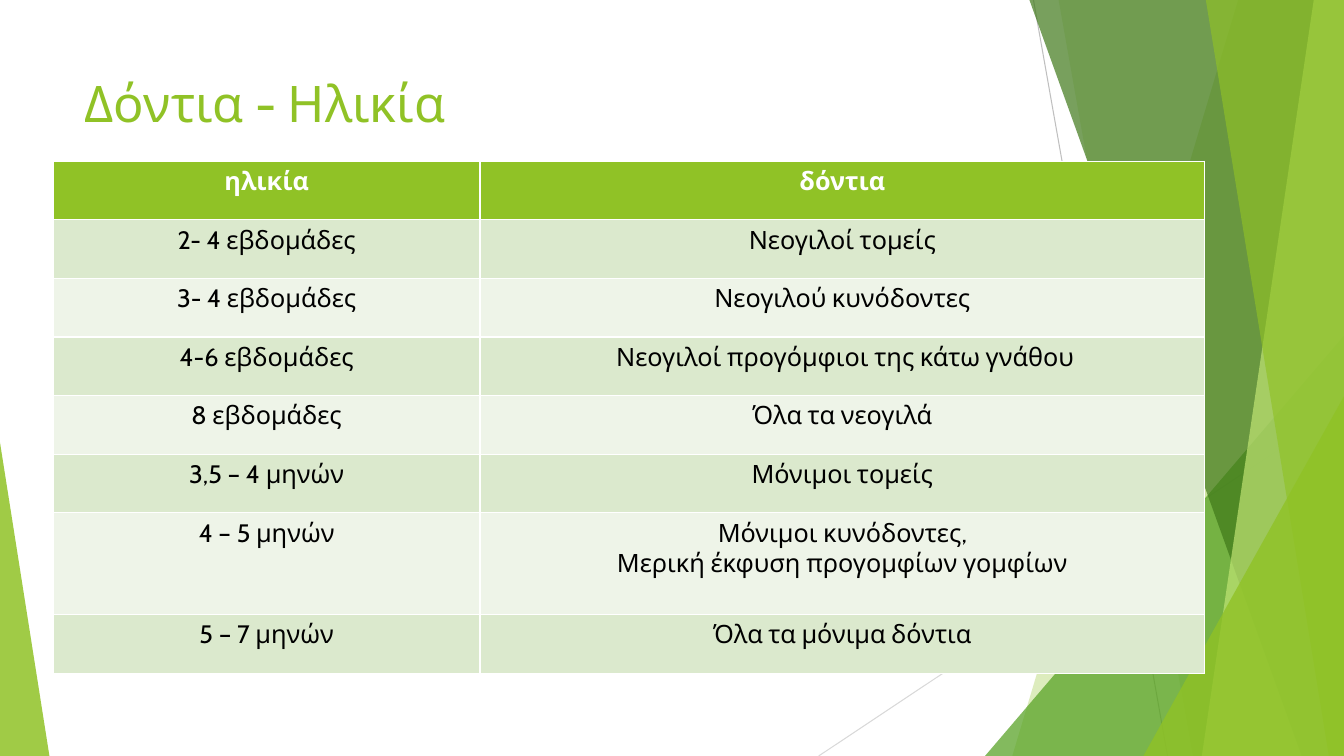
from lxml.etree import SubElement
from pptx import Presentation
from pptx.dml.color import RGBColor
from pptx.enum.shapes import MSO_CONNECTOR, MSO_SHAPE
from pptx.enum.text import MSO_ANCHOR, PP_ALIGN
from pptx.oxml.ns import qn
from pptx.util import Inches, Pt

LIME = RGBColor(0x90, 0xC2, 0x26)
PALE_LIME = RGBColor(0xC0, 0xE4, 0x74)
LEAF = RGBColor(0x54, 0xA0, 0x21)
FOREST = RGBColor(0x3F, 0x78, 0x19)
RAY_GREY = RGBColor(0xBF, 0xBF, 0xBF)
LIGHT_RAY_GREY = RGBColor(0xD9, 0xD9, 0xD9)
DARK_BAND = RGBColor(0xDB, 0xE9, 0xCD)
LIGHT_BAND = RGBColor(0xEE, 0xF4, 0xE8)
WHITE = RGBColor(0xFF, 0xFF, 0xFF)
BLACK = RGBColor(0, 0, 0)

WIDTH, HEIGHT = 13.33, 7.5
FONT = "Cabin"

RAYS = [
    ((3.08, 0), (1.75, 7.5), RAY_GREY),
    ((0, 4.03), (5.21, 7.5), LIGHT_RAY_GREY),
]
FACETS = [
    ("blade", 1.05, 3.29, LIME, 30),
    ("blade", 2.83, 1.5, LIME, 20),
    ("wedge", 3.56, 4.17, LEAF, 72),
    ("blade", 3.12, 0.42, FOREST, 70),
    ("blade", 0.3, 1.41, PALE_LIME, 70),
    ("blade", 1.37, 0.15, LIME, 65),
    ("wedge", 1.99, 3.57, LIME, 80),
]
TEETH_BY_AGE = [
    ("ηλικία", "δόντια"),
    ("2- 4 εβδομάδες", "Νεογιλοί τομείς"),
    ("3- 4 εβδομάδες", "Νεογιλού κυνόδοντες"),
    ("4-6 εβδομάδες", " Νεογιλοί προγόμφιοι της κάτω γνάθου"),
    ("8 εβδομάδες", "Όλα τα νεογιλά"),
    ("3,5 – 4 μηνών", "Μόνιμοι τομείς"),
    ("4 – 5 μηνών", "Μόνιμοι κυνόδοντες,\nΜερική έκφυση προγομφίων γομφίων"),
    ("5 – 7 μηνών", "Όλα τα μόνιμα δόντια"),
]


def apply_format(target, values):
    for name, value in values.items():
        setattr(target, name, value)


def tint(facet, color, opacity):
    facet.shadow.inherit = False
    facet.line.fill.background()
    facet.fill.solid()
    facet.fill.fore_color.rgb = color
    srgb = facet.fill._xPr.find(qn("a:solidFill")).find(qn("a:srgbClr"))
    SubElement(srgb, qn("a:alpha"), val=str(opacity * 1000))


def add_wedge(shapes, left, bottom, width, height, apex, color, opacity):
    wedge = shapes.add_shape(
        MSO_SHAPE.ISOSCELES_TRIANGLE,
        Inches(left), Inches(bottom - height), Inches(width), Inches(height))
    wedge.adjustments[0] = apex
    tint(wedge, color, opacity)


def add_blade(shapes, right, bottom, top_inset, bottom_inset, color, opacity):
    outline = shapes.build_freeform(Inches(right - top_inset), 0)
    corners = [(right, 0), (right, bottom), (right - bottom_inset, bottom)]
    outline.add_line_segments([(Inches(x), Inches(y)) for x, y in corners])
    tint(outline.convert_to_shape(), color, opacity)


def add_ray(shapes, right, start, end, color):
    ray = shapes.add_connector(
        MSO_CONNECTOR.STRAIGHT,
        Inches(right - start[0]), Inches(start[1]),
        Inches(right - end[0]), Inches(end[1]))
    ray.line.color.rgb = color
    ray.line.width = Pt(0.75)
    SubElement(ray._element.spPr, qn("a:effectLst"))


def add_backdrop(shapes, width, height):
    for start, end, color in RAYS:
        add_ray(shapes, width, start, end, color)
    for kind, first, second, color, opacity in FACETS:
        if kind == "blade":
            add_blade(shapes, width, height, first, second, color, opacity)
        else:
            add_wedge(shapes, width - first, height, first, second, 1, color, opacity)
    add_wedge(shapes, 0, height, 0.49, 3.11, 0, LIME, 85)


def set_title(title, left, top, width, height):
    apply_format(title, {
        "left": Inches(left), "top": Inches(top),
        "width": Inches(width), "height": Inches(height)})
    title.text_frame.text = "Δόντια - Ηλικία"
    title.text_frame.vertical_anchor = MSO_ANCHOR.TOP
    heading = title.text_frame.paragraphs[0]
    heading.alignment = PP_ALIGN.LEFT
    apply_format(heading.runs[0].font, {"size": Pt(36), "name": FONT})
    heading.runs[0].font.color.rgb = LIME


def fill_cell(cell, text, band, ink, bold):
    cell.fill.solid()
    cell.fill.fore_color.rgb = band
    cell.text_frame.text = text
    for paragraph in cell.text_frame.paragraphs:
        paragraph.alignment = PP_ALIGN.CENTER
        for run in paragraph.runs:
            apply_format(run.font, {"size": Pt(18), "name": FONT, "bold": bold})
            run.font.color.rgb = ink


def add_teeth_table(shapes, left, top, width, height):
    table = shapes.add_table(
        len(TEETH_BY_AGE), 2,
        Inches(left), Inches(top), Inches(width), Inches(height)).table
    age_width, tall_row = 4.23, 1.01
    table.columns[0].width = Inches(age_width)
    table.columns[1].width = Inches(width - age_width)
    row_height = (height - tall_row) / (len(TEETH_BY_AGE) - 1)
    for index, entry in enumerate(TEETH_BY_AGE):
        two_lines = any("\n" in text for text in entry)
        table.rows[index].height = Inches(tall_row if two_lines else row_height)
        header = index == 0
        band = LIME if header else DARK_BAND if index % 2 else LIGHT_BAND
        for column, text in enumerate(entry):
            fill_cell(table.cell(index, column), text, band,
                      WHITE if header else BLACK, header)


def main():
    deck = Presentation()
    deck.slide_width, deck.slide_height = Inches(WIDTH), Inches(HEIGHT)
    slide = deck.slides.add_slide(deck.slide_layouts[5])
    add_backdrop(slide.shapes, WIDTH, HEIGHT)
    set_title(slide.shapes.title, 0.74, 0.67, 9.4, 1.44)
    add_teeth_table(slide.shapes, 0.53, 1.6, 11.42, 5.08)
    deck.save("out.pptx")


if __name__ == "__main__":
    main()
